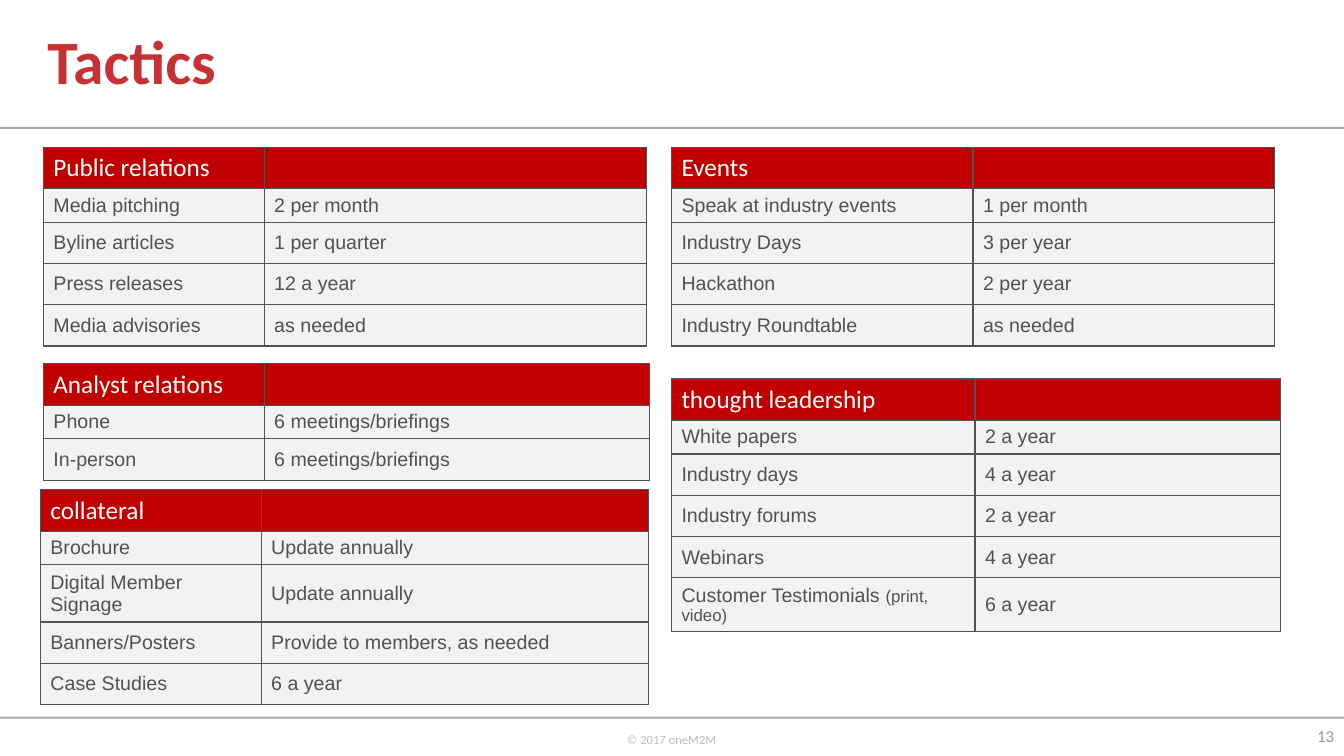
"""Build the Tactics slide with its five activity tables."""
import pptx
import pptx.dml.color
import pptx.enum.shapes
import pptx.enum.text
import pptx.oxml
import pptx.oxml.ns
import pptx.util

Inches = pptx.util.Inches
Pt = pptx.util.Pt
RGBColor = pptx.dml.color.RGBColor
PP_ALIGN = pptx.enum.text.PP_ALIGN
MSO_ANCHOR = pptx.enum.text.MSO_ANCHOR

TITLE_RED = RGBColor(0xC6, 0x31, 0x33)
HEADER_RED = RGBColor(0xC0, 0x00, 0x00)
WHITE = RGBColor(0xFF, 0xFF, 0xFF)
PALE_GREY = RGBColor(0xF2, 0xF2, 0xF2)
INK = RGBColor(0x54, 0x50, 0x54)
RULE_GREY = RGBColor(0xA7, 0xA9, 0xAC)
COPYRIGHT_GREY = RGBColor(0xBF, 0xBF, 0xBF)
NUMBER_GREY = RGBColor(0x99, 0x98, 0x99)

HEADING_FONT = "Calibri"
BODY_FONT = "Arial"
HEADER_HEIGHT = 0.41
FIRST_HEIGHT = 0.32
ROW_HEIGHT = 0.41

PUBLIC_RELATIONS = [
    ("Media pitching", "2 per month"),
    ("Byline articles", "1 per quarter"),
    ("Press releases", "12 a year"),
    ("Media advisories", "as needed"),
]
ANALYST_RELATIONS = [
    ("Phone", "6 meetings/briefings"),
    ("In-person", "6 meetings/briefings"),
]
THOUGHT_LEADERSHIP = [
    ("White papers", "2 a year"),
    ("Industry days", "4 a year"),
    ("Industry forums", "2 a year"),
    ("Webinars", "4 a year"),
    ("Customer Testimonials |(print, video)", "6 a year"),
]
COLLATERAL = [
    ("Brochure", "Update annually"),
    ("Digital Member Signage", "Update annually"),
    ("Banners/Posters", "Provide to members, as needed"),
    ("Case Studies", "6 a year"),
]
EVENTS = [
    ("Speak at industry events", "1 per month"),
    ("Industry Days", "3 per year"),
    ("Hackathon", "2 per year"),
    ("Industry Roundtable", "as needed"),
]


class TacticsSlide:
    """Hold the slide and draw its elements in one style."""

    def __init__(self, deck):
        self.slide = deck.slides.add_slide(deck.slide_layouts[5])

    def add_text(self, paragraph, text, size, color, font=HEADING_FONT, bold=False):
        """Add one formatted run."""
        run = paragraph.add_run()
        run.text = text
        run.font.name = font
        run.font.size = Pt(size)
        run.font.bold = bold
        run.font.color.rgb = color

    def title(self, text, left, top, width, height):
        """Place and format the title placeholder."""
        heading = self.slide.shapes.title
        heading.left, heading.top = Inches(left), Inches(top)
        heading.width, heading.height = Inches(width), Inches(height)
        frame = heading.text_frame
        frame.vertical_anchor = MSO_ANCHOR.MIDDLE
        paragraph = frame.paragraphs[0]
        paragraph.alignment = PP_ALIGN.LEFT
        paragraph.line_spacing = 0.9
        self.add_text(paragraph, text, 44, TITLE_RED, bold=True)

    def rule(self, top):
        """Draw a thin band across the slide."""
        band = self.slide.shapes.add_shape(
            pptx.enum.shapes.MSO_SHAPE.RECTANGLE,
            Inches(0), Inches(top), Inches(13.33), Inches(0.02))
        band.shadow.inherit = False
        band.fill.solid()
        band.fill.fore_color.rgb = RULE_GREY
        band.line.fill.background()

    def label(self, text, left, top, width, size, color, align, anchor, wrap):
        """Add a footer text box."""
        box = self.slide.shapes.add_textbox(
            Inches(left), Inches(top), Inches(width), Inches(0.4))
        frame = box.text_frame
        frame.word_wrap = wrap
        frame.vertical_anchor = anchor
        frame.paragraphs[0].alignment = align
        self.add_text(frame.paragraphs[0], text, size, color)

    def style_cell(self, cell, fill):
        """Give a cell its borders, fill and anchor."""
        properties = cell._tc.get_or_add_tcPr()
        for side in ("lnL", "lnR", "lnT", "lnB"):
            properties.append(pptx.oxml.parse_xml(
                f'<a:{side} {pptx.oxml.ns.nsdecls("a")} w="{Pt(1)}">'
                f'<a:solidFill><a:srgbClr val="{INK}"/></a:solidFill></a:{side}>'))
        cell.fill.solid()
        cell.fill.fore_color.rgb = fill
        cell.vertical_anchor = MSO_ANCHOR.MIDDLE

    def tactics(self, heading, activities, left, top, widths):
        """Add a table with a heading row; text after a bar is set smaller."""
        heights = [HEADER_HEIGHT, FIRST_HEIGHT] + [ROW_HEIGHT] * (len(activities) - 1)
        table = self.slide.shapes.add_table(
            len(heights), 2, Inches(left), Inches(top),
            Inches(sum(widths)), Inches(sum(heights))).table
        table.first_row = False
        table.horz_banding = False
        for column, width in zip(table.columns, widths):
            column.width = Inches(width)
        for row, height in zip(table.rows, heights):
            row.height = Inches(height)
        for cell in table.rows[0].cells:
            self.style_cell(cell, HEADER_RED)
        self.add_text(table.cell(0, 0).text_frame.paragraphs[0], heading, 18, WHITE)
        for row, activity in enumerate(activities, 1):
            for column, text in enumerate(activity):
                cell = table.cell(row, column)
                self.style_cell(cell, PALE_GREY)
                for part, size in zip(text.split("|"), (14, 12)):
                    self.add_text(cell.text_frame.paragraphs[0], part, size, INK, BODY_FONT)


def main():
    deck = pptx.Presentation()
    deck.slide_width, deck.slide_height = Inches(13.33), Inches(7.5)
    page = TacticsSlide(deck)
    page.rule(1.26)
    page.rule(7.11)
    page.label("© 2017 oneM2M", 6.12, 7.21, 1.1, 9, COPYRIGHT_GREY,
               PP_ALIGN.LEFT, MSO_ANCHOR.TOP, False)
    page.title("Tactics", 0.37, 0, 8.59, 1.28)
    page.label("13", 12.79, 7.1, 0.54, 12, NUMBER_GREY,
               PP_ALIGN.RIGHT, MSO_ANCHOR.MIDDLE, True)
    page.tactics("Public relations", PUBLIC_RELATIONS, 0.43, 1.46, (2.19, 3.79))
    page.tactics("Analyst relations", ANALYST_RELATIONS, 0.43, 3.61, (2.19, 3.82))
    page.tactics("thought leadership", THOUGHT_LEADERSHIP, 6.66, 3.76, (3.01, 3.03))
    page.tactics("collateral", COLLATERAL, 0.4, 4.86, (2.19, 3.84))
    page.tactics("Events", EVENTS, 6.66, 1.46, (2.99, 2.99))
    deck.save("out.pptx")


if __name__ == "__main__":
    main()
